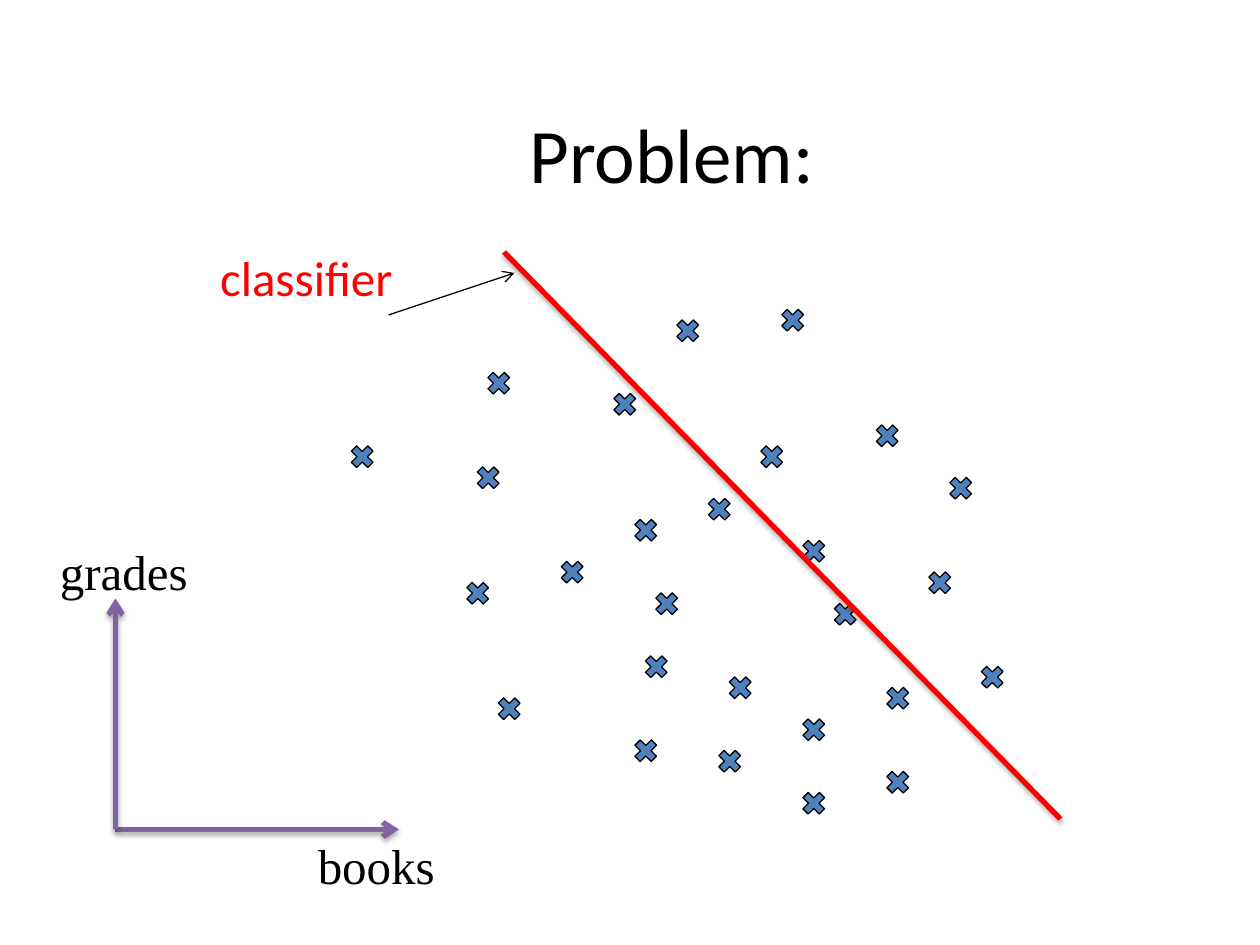
from lxml import etree
from pptx import Presentation
from pptx.dml.color import RGBColor
from pptx.enum.shapes import MSO_CONNECTOR, MSO_SHAPE
from pptx.enum.text import MSO_ANCHOR, MSO_AUTO_SIZE, PP_ALIGN
from pptx.oxml import parse_xml
from pptx.oxml.ns import qn
from pptx.util import Pt

STRAIGHT = MSO_CONNECTOR.STRAIGHT
CROSS = MSO_SHAPE.MATH_MULTIPLY
CENTER = PP_ALIGN.CENTER
MIDDLE = MSO_ANCHOR.MIDDLE
FIT_SHAPE = MSO_AUTO_SIZE.SHAPE_TO_FIT_TEXT
TITLE_ONLY = 5

COLORS = {"text": "000000", "marker": "4F81BD", "classifier": "FF0000", "axis": "8064A2"}

GRID = 6
MARKER_SIZE = 18
# Column and row of each sample, in grid steps from the plot's corner
SAMPLES = [
    (13, 6), (12, 15), (31, 1), (39, 13), (0, 13), (11, 26), (20, 24),
    (27, 20), (34, 18), (28, 33), (29, 27), (43, 22), (36, 35), (46, 28),
    (35, 42), (27, 41), (43, 39), (43, 46), (51, 36), (51, 44), (50, 11),
    (55, 25), (57, 16), (41, 0), (60, 34), (25, 8), (14, 37),
]

SHADOW = (
    '<a:effectLst xmlns:a="http://schemas.openxmlformats.org/drawingml/2006/main">'
    '<a:outerShdw blurRad="40000" dist="23000" dir="5400000" rotWithShape="0">'
    '<a:srgbClr val="000000"><a:alpha val="35000"/></a:srgbClr>'
    "</a:outerShdw></a:effectLst>"
)


def color(name):
    return RGBColor.from_string(COLORS[name])


def write_text(shape, text, size=28, font="Calibri", fill="text"):
    paragraph = shape.text_frame.paragraphs[0]
    paragraph.alignment = CENTER
    run = paragraph.add_run()
    run.text = text
    run.font.size = Pt(size)
    run.font.name = font
    run.font.color.rgb = color(fill)


def add_label(slide, left, top, width, text, **text_format):
    shape = slide.shapes.add_textbox(Pt(left), Pt(top), Pt(width), Pt(41))
    shape.text_frame.word_wrap = False
    shape.text_frame.auto_size = FIT_SHAPE
    write_text(shape, text, **text_format)


def add_line(slide, start, end, fill, width=3, arrow=False, shadow=True):
    line = slide.shapes.add_connector(STRAIGHT, *map(Pt, start + end))
    line.line.color.rgb = color(fill)
    line.line.width = Pt(width)
    properties = line._element.spPr
    if arrow:
        etree.SubElement(properties.find(qn("a:ln")), qn("a:tailEnd"), type="arrow")
    if shadow:
        properties.append(parse_xml(SHADOW))
    else:
        etree.SubElement(properties, qn("a:effectLst"))


def add_title(slide, left, top, width, height):
    title = slide.shapes.title
    title.left, title.top, title.width, title.height = map(Pt, (left, top, width, height))
    title.text_frame.vertical_anchor = MIDDLE
    write_text(title, "Problem:", size=44)


def add_samples(slide, left, top):
    for column, row in SAMPLES:
        marker = slide.shapes.add_shape(
            CROSS, Pt(left + column * GRID), Pt(top + row * GRID),
            Pt(MARKER_SIZE), Pt(MARKER_SIZE))
        marker.shadow.inherit = False
        marker.fill.solid()
        marker.fill.fore_color.rgb = color("marker")
        marker.line.color.rgb = color("text")
        marker.line.width = Pt(0.75)


def add_classifier(slide, left, top, width, height):
    # Dividing line, then its label and pointer
    add_line(slide, (left, top), (left + width, top + height), "classifier")
    add_label(slide, left - 170, top - 6, 114, "classifier", fill="classifier")
    add_line(slide, (left - 66, top + 36), (left + 6, top + 12), "text",
             width=0.75, arrow=True, shadow=False)


def add_axes(slide, left, top, width, height):
    origin = (left, top + height)
    add_line(slide, origin, (left + width, top + height), "axis", arrow=True)
    add_line(slide, origin, (left, top), "axis", arrow=True)
    add_label(slide, left + 108, top + height, 82, "books", font="Times New Roman")
    add_label(slide, left - 39.5, top - 36, 88.5, "grades", font="Times New Roman")


def main():
    presentation = Presentation()
    presentation.slide_width, presentation.slide_height = Pt(720), Pt(540)
    slide = presentation.slides.add_slide(presentation.slide_layouts[TITLE_ONLY])
    add_title(slide, 78, 42, 612, 90)
    add_samples(slide, 198, 174)
    add_classifier(slide, 288, 144, 318, 324)
    add_axes(slide, 66, 342, 162, 132)
    presentation.save("out.pptx")


if __name__ == "__main__":
    main()
